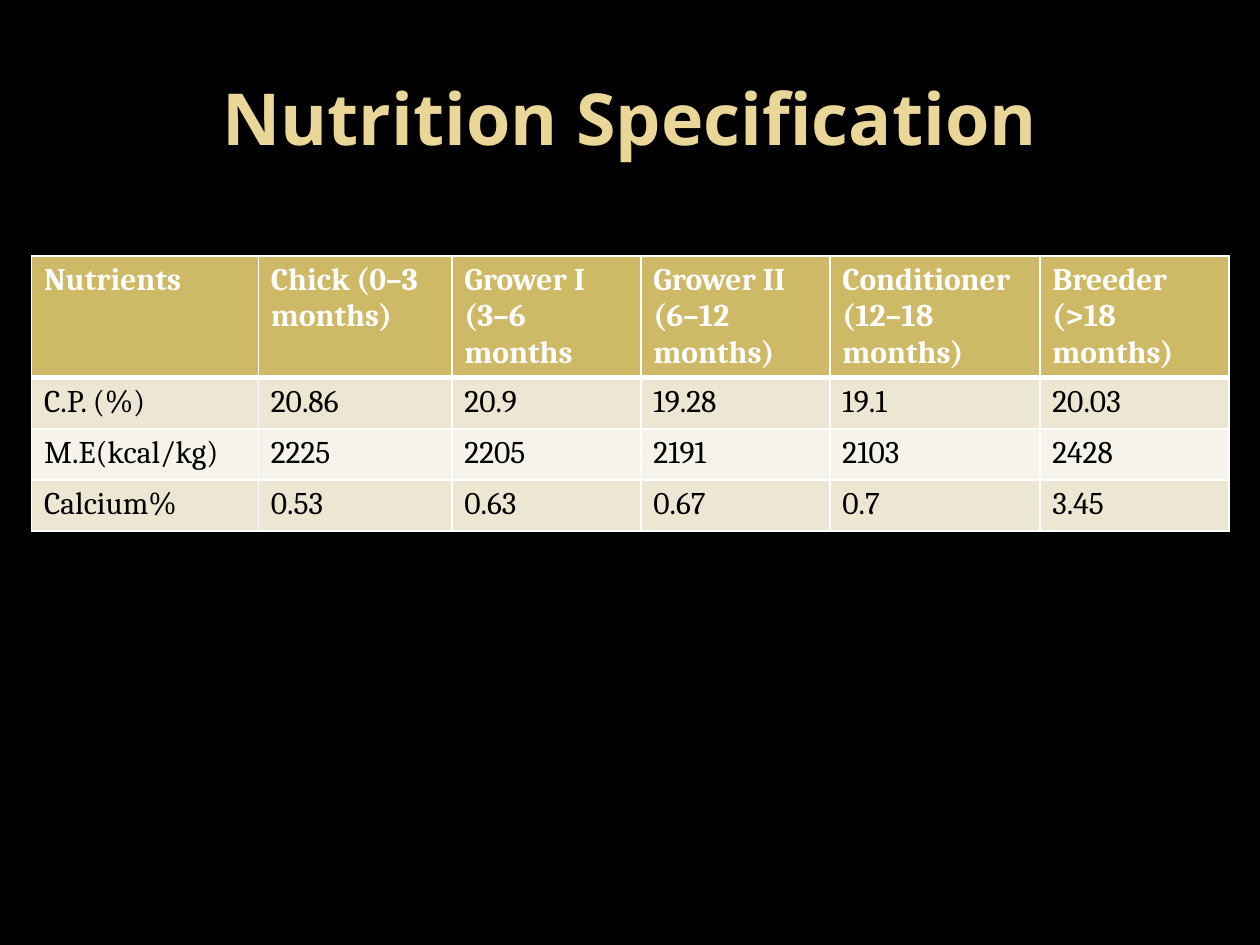
from lxml import etree
from pptx import Presentation
from pptx.dml.color import RGBColor
from pptx.enum.text import MSO_ANCHOR, MSO_AUTO_SIZE, PP_ALIGN
from pptx.oxml.ns import qn
from pptx.util import Pt

CENTER, MIDDLE, TOP = PP_ALIGN.CENTER, MSO_ANCHOR.MIDDLE, MSO_ANCHOR.TOP
NO_FIT = MSO_AUTO_SIZE.NONE

# Content
TITLE = "Nutrition Specification"
HEAD = ["Nutrients", "Chick (0–3\nmonths)", "Grower I (3–6\nmonths",
        "Grower II\n(6–12 months)", "Conditioner\n(12–18 months)",
        "Breeder\n(>18\nmonths)"]
BODY = [
    ["C.P. (%)", "20.86", "20.9", "19.28", "19.1", "20.03"],
    ["M.E(kcal/kg)", "2225", "2205", "2191", "2103", "2428"],
    ["Calcium%", "0.53", "0.63", "0.67", "0.7", "3.45"],
]

# Theme and layout, in points
THEME = {
    "back": "000000", "line": "FFFFFF", "head": "CEB966",
    "bands": ["EDE6D3", "F6F3EA"],
    "title": {"name": "Noto Sans", "size": 41, "bold": True, "color": "EAD696"},
    "label": {"name": "Cambria", "size": 18, "bold": True, "color": "FFFFFF"},
    "value": {"name": "Cambria", "size": 18, "bold": False, "color": "000000"},
}
PAGE = (720, 540)
TITLE_BOX = {"left": 36, "top": 21.6, "width": 648, "height": 90}
TABLE_AT = (18, 146.2)
COLS = [129.6, 110.6, 108, 108, 120, 108]
HEAD_H, ROW_H = 69.7, 29.2
THIN, THICK = 1, 3


def paint(fill, color):
    fill.solid()
    fill.fore_color.rgb = RGBColor.from_string(color)


def style(frame, look):
    for para in frame.paragraphs:
        for run in para.runs:
            form = {"name": look["name"], "size": Pt(look["size"]),
                    "bold": look["bold"]}
            for key, val in form.items():
                setattr(run.font, key, val)
            run.font.color.rgb = RGBColor.from_string(look["color"])


def edge(cell, sides):
    """Draw cell borders; they must come before the fill in the XML."""
    props = cell._tc.get_or_add_tcPr()
    for spot, (side, width) in enumerate(sides.items()):
        line = etree.Element(qn("a:ln" + side), w=str(Pt(width)))
        fill = etree.SubElement(line, qn("a:solidFill"))
        etree.SubElement(fill, qn("a:srgbClr"), val=THEME["line"])
        props.insert(spot, line)


def add_title(slide):
    title = slide.shapes.title
    for key, val in TITLE_BOX.items():
        setattr(title, key, Pt(val))
    frame = title.text_frame
    frame.text = TITLE
    form = {"word_wrap": True, "auto_size": NO_FIT, "vertical_anchor": MIDDLE}
    for key, val in form.items():
        setattr(frame, key, val)
    frame.paragraphs[0].alignment = CENTER
    style(frame, THEME["title"])


def add_grid(slide):
    rows = [HEAD] + BODY
    highs = [HEAD_H] + [ROW_H] * len(BODY)
    box = [Pt(n) for n in (*TABLE_AT, sum(COLS), sum(highs))]
    table = slide.shapes.add_table(len(rows), len(COLS), *box).table
    for col, wide in zip(table.columns, COLS):
        col.width = Pt(wide)
    for r, (row, high) in enumerate(zip(rows, highs)):
        table.rows[r].height = Pt(high)
        color = THEME["bands"][(r - 1) % 2] if r else THEME["head"]
        sides = {"L": THIN, "R": THIN, "T": THICK if r == 1 else THIN,
                 "B": THIN if r else THICK}
        for c, text in enumerate(row):
            cell = table.cell(r, c)
            cell.text = text
            cell.vertical_anchor = TOP
            paint(cell.fill, color)
            edge(cell, sides)
            style(cell.text_frame, THEME["value" if r else "label"])


def main():
    deck = Presentation()
    deck.slide_width, deck.slide_height = map(Pt, PAGE)
    slide = deck.slides.add_slide(deck.slide_layouts[5])
    paint(slide.background.fill, THEME["back"])
    add_title(slide)
    add_grid(slide)
    deck.save("out.pptx")


if __name__ == "__main__":
    main()
